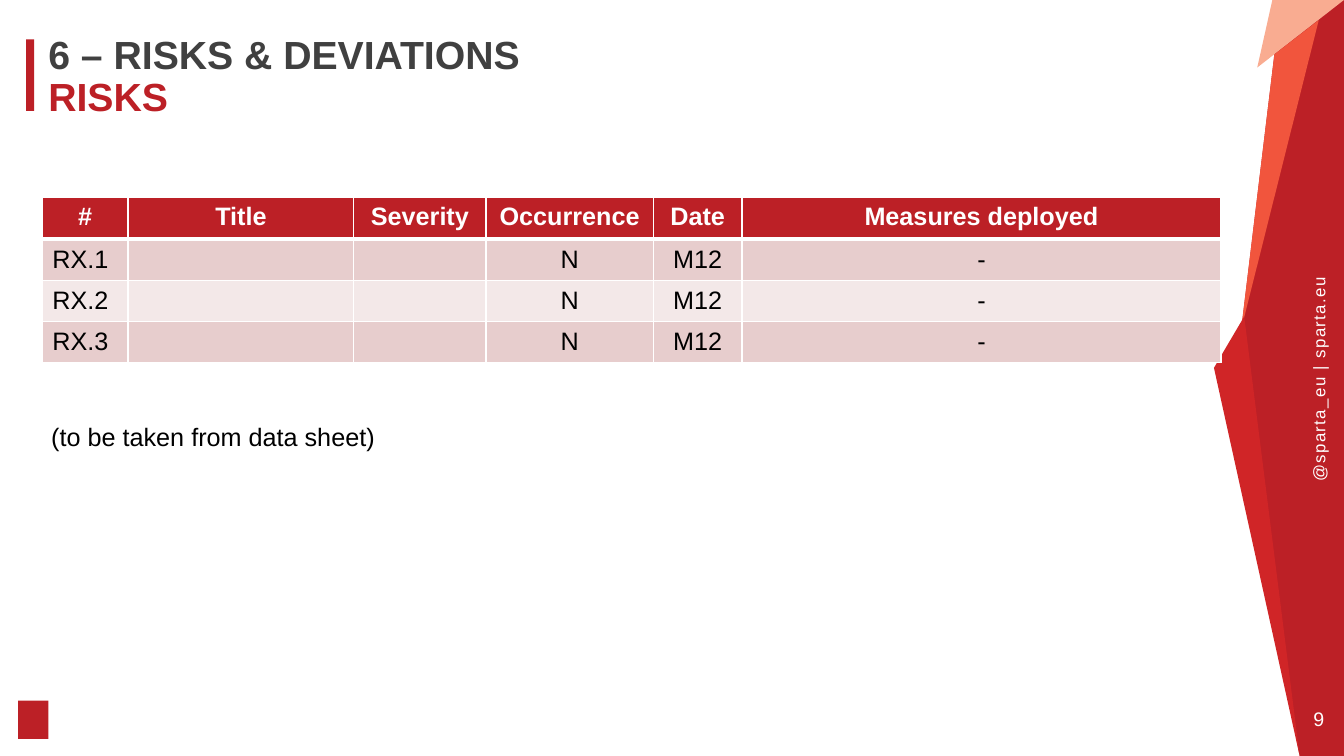
"""Build the risks slide of a project review deck."""
import pptx
import pptx.dml.color
import pptx.enum.shapes
import pptx.enum.text
import pptx.oxml
import pptx.oxml.ns
import pptx.util

Inches = pptx.util.Inches
Pt = pptx.util.Pt
ALIGN = pptx.enum.text.PP_ALIGN
MIDDLE = pptx.enum.text.MSO_ANCHOR.MIDDLE

RED, WHITE, BLACK, GREY = "BC2026", "FFFFFF", "000000", "404040"
BANDS = ["E7CDCD", "F3E8E8"]

FACETS = [
    (RED, [(13.33, 0), (13.33, 7.5), (12.89, 7.5), (12.23, 3.94), (12.64, 0.54), (12.76, 0)]),
    ("F9AC91", [(13.33, 0), (12.47, 0.67), (12.62, 0)]),
    ("F1553D", [(13.08, 0.2), (12.31, 3.27), (12.64, 0.54)]),
    ("D02527", [(12.34, 3.14), (12.89, 7.5), (12.04, 3.65)]),
]
COLUMNS = [
    ("#", 0.85), ("Title", 2.24), ("Severity", 1.31),
    ("Occurrence", 1.66), ("Date", 0.88), ("Measures deployed", 4.75),
]
RISKS = [[f"RX.{n}", "", "", "N", "M12", "-"] for n in (1, 2, 3)]
ROW_HEIGHT = 0.41


def rgb(value):
    """Turn a hex string into a colour."""
    return pptx.dml.color.RGBColor.from_string(value)


def add_text(p, text, size=18, color=BLACK, bold=False, align=None, spacing=None):
    """Append a formatted run to a paragraph."""
    if align is not None:
        p.alignment = align
    r = p.add_run()
    r.text = text
    r.font.name = "Arial"
    r.font.size = Pt(size)
    r.font.bold = bold
    r.font.color.rgb = rgb(color)
    if spacing:
        r.font._element.set("spc", str(spacing * 100))


def add_box(s, left, top, width, height, margins=True, wrap=True, anchor=None, rotation=0):
    """Add a text box and return its first paragraph."""
    sp = s.shapes.add_textbox(Inches(left), Inches(top), Inches(width), Inches(height))
    sp.rotation = rotation
    tf = sp.text_frame
    tf.word_wrap = wrap
    if anchor is not None:
        tf.vertical_anchor = anchor
    if not margins:
        tf.margin_left = tf.margin_right = tf.margin_top = tf.margin_bottom = 0
    return tf.paragraphs[0]


def paint(sp, color):
    """Give a shape a flat fill without line or shadow."""
    sp.shadow.inherit = False
    sp.fill.solid()
    sp.fill.fore_color.rgb = rgb(color)
    sp.line.fill.background()


def add_facet(s, color, points):
    """Add a filled polygon."""
    points = [(Inches(x), Inches(y)) for x, y in points]
    builder = s.shapes.build_freeform(*points[0])
    builder.add_line_segments(points[1:], close=True)
    paint(builder.convert_to_shape(), color)


def add_bar(s, left, top, width, height, color):
    """Add a filled rectangle."""
    shape = pptx.enum.shapes.MSO_SHAPE.RECTANGLE
    paint(s.shapes.add_shape(shape, Inches(left), Inches(top), Inches(width), Inches(height)), color)


def set_borders(cell, top, bottom):
    """Draw white cell borders with the given top and bottom widths."""
    tcPr = cell._tc.get_or_add_tcPr()
    for i, (side, width) in enumerate([("L", 1), ("R", 1), ("T", top), ("B", bottom)]):
        tcPr.insert(i, pptx.oxml.parse_xml(
            f'<a:ln{side} {pptx.oxml.ns.nsdecls("a")} w="{Pt(width)}"><a:solidFill>'
            f'<a:srgbClr val="{WHITE}"/></a:solidFill></a:ln{side}>'))


def add_risk_table(s, left, top):
    """Add the risk table with a red header and banded rows."""
    rows = [[name for name, _ in COLUMNS]] + RISKS
    width = sum(w for _, w in COLUMNS)
    table = s.shapes.add_table(len(rows), len(COLUMNS), Inches(left), Inches(top),
                               Inches(width), Inches(ROW_HEIGHT * len(rows))).table
    for column, (_, w) in zip(table.columns, COLUMNS):
        column.width = Inches(w)
    for i, row in enumerate(rows):
        header = i == 0
        for j, text in enumerate(row):
            cell = table.cell(i, j)
            cell.fill.solid()
            cell.fill.fore_color.rgb = rgb(RED if header else BANDS[(i - 1) % 2])
            set_borders(cell, top=3 if i == 1 else 1, bottom=3 if header else 1)
            if not header:
                cell.vertical_anchor = MIDDLE
            if text:
                add_text(cell.text_frame.paragraphs[0], text, bold=header,
                         color=WHITE if header else BLACK,
                         align=ALIGN.CENTER if header or j else ALIGN.LEFT)


def main():
    """Build and save the slide."""
    prs = pptx.Presentation()
    prs.slide_width, prs.slide_height = Inches(13.33), Inches(7.5)
    s = prs.slides.add_slide(prs.slide_layouts[6])

    for color, points in FACETS:
        add_facet(s, color, points)
    p = add_box(s, 12.05, 3.65, 2.06, 0.2, margins=False, wrap=False, anchor=MIDDLE, rotation=270)
    add_text(p, "@sparta_eu | sparta.eu", size=12, color=WHITE, spacing=1)
    p = add_box(s, 12.96, 7.01, 0.24, 0.24, margins=False, wrap=False, anchor=MIDDLE)
    add_text(p, "9", size=14, color=WHITE, align=ALIGN.CENTER)
    add_bar(s, 0.26, 0.39, 0.08, 0.71, RED)
    add_bar(s, 0.18, 6.95, 0.3, 0.38, RED)

    p = add_box(s, 0.48, 0.35, 11.34, 0.87, margins=False)
    p.line_spacing = 0.9
    add_text(p, "6 – RISKS & DEVIATIONS", size=28, color=GREY, bold=True)
    p.add_line_break()
    add_text(p, "RISKS", size=28, color=RED, bold=True)

    add_risk_table(s, 0.42, 1.96)
    add_text(add_box(s, 0.41, 4.13, 5.85, 0.4), "(to be taken from data sheet)")
    prs.save("out.pptx")


if __name__ == "__main__":
    main()
